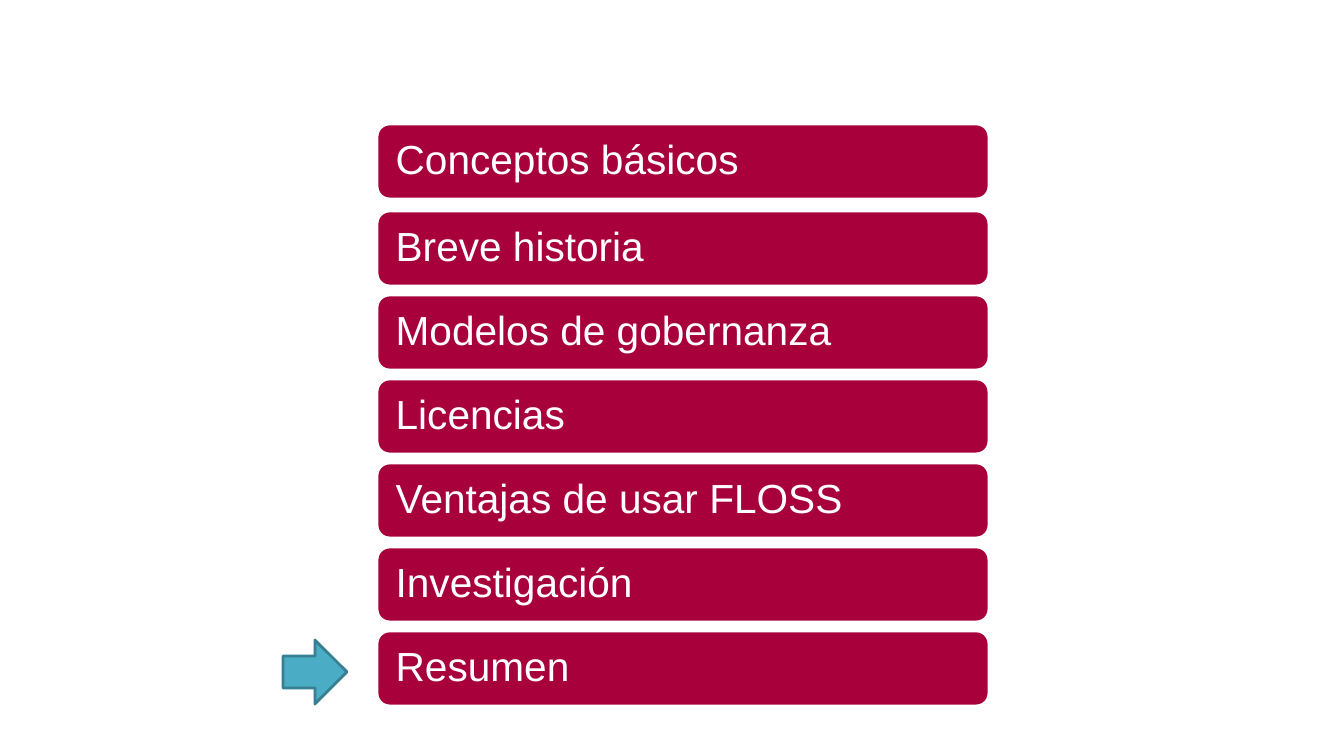
from dataclasses import dataclass

from pptx import Presentation
from pptx.dml.color import RGBColor
from pptx.enum.shapes import MSO_SHAPE
from pptx.enum.text import MSO_ANCHOR, PP_ALIGN
from pptx.shapes.autoshape import Shape
from pptx.slide import Slide
from pptx.util import Emu, Pt

WHITE = RGBColor(0xFF, 0xFF, 0xFF)
CRIMSON = RGBColor(0xA8, 0x00, 0x3B)
TEAL = RGBColor(0x4B, 0xAC, 0xC6)
DARK_TEAL = RGBColor(0x37, 0x7F, 0x92)

SCALE = 914400 / 100.8  # EMU in one px
LEFT, WIDTH, HEIGHT = 377, 612, 75
FIRST, SECOND, STEP = 124, 211, 84
INSET = 15
TOPICS = [
    "Conceptos básicos",
    "Breve historia",
    "Modelos de gobernanza",
    "Licencias",
    "Ventajas de usar FLOSS",
    "Investigación",
    "Resumen",
]


@dataclass
class Bar:
    text: str
    top: int


def px(count: int) -> Emu:
    return Emu(round(count * SCALE))


def draw_shape(slide: Slide, kind: MSO_SHAPE, box: tuple[int, int, int, int],
               fill: RGBColor, line: RGBColor) -> Shape:
    shape = slide.shapes.add_shape(kind, *map(px, box))
    shape.shadow.inherit = False
    shape.fill.solid()
    shape.fill.fore_color.rgb = fill
    shape.line.color.rgb = line
    shape.line.width = Pt(2)
    return shape


def draw_bar(slide: Slide, bar: Bar) -> None:
    shape = draw_shape(slide, MSO_SHAPE.ROUNDED_RECTANGLE,
                       (LEFT, bar.top, WIDTH, HEIGHT), CRIMSON, WHITE)
    frame = shape.text_frame
    frame.word_wrap = True
    frame.vertical_anchor = MSO_ANCHOR.MIDDLE
    frame.margin_left = frame.margin_right = px(INSET)
    frame.margin_top = frame.margin_bottom = px(INSET)
    line = frame.paragraphs[0]
    line.text = bar.text
    line.alignment = PP_ALIGN.LEFT
    line.line_spacing = 0.9
    line.font.name = "Arial"
    line.font.size = Pt(29)
    line.font.color.rgb = WHITE


def main() -> None:
    deck = Presentation()
    deck.slide_width, deck.slide_height = px(1344), px(756)
    slide = deck.slides.add_slide(deck.slide_layouts[6])

    # Agenda: the first bar stands apart, the rest are evenly spaced
    tops = [FIRST] + [SECOND + STEP * i for i in range(len(TOPICS) - 1)]
    for text, top in zip(TOPICS, tops):
        draw_bar(slide, Bar(text, top))

    # Arrow at the current topic
    draw_shape(slide, MSO_SHAPE.RIGHT_ARROW, (283, 640, 64, 64), TEAL, DARK_TEAL)

    deck.save("out.pptx")


if __name__ == "__main__":
    main()
